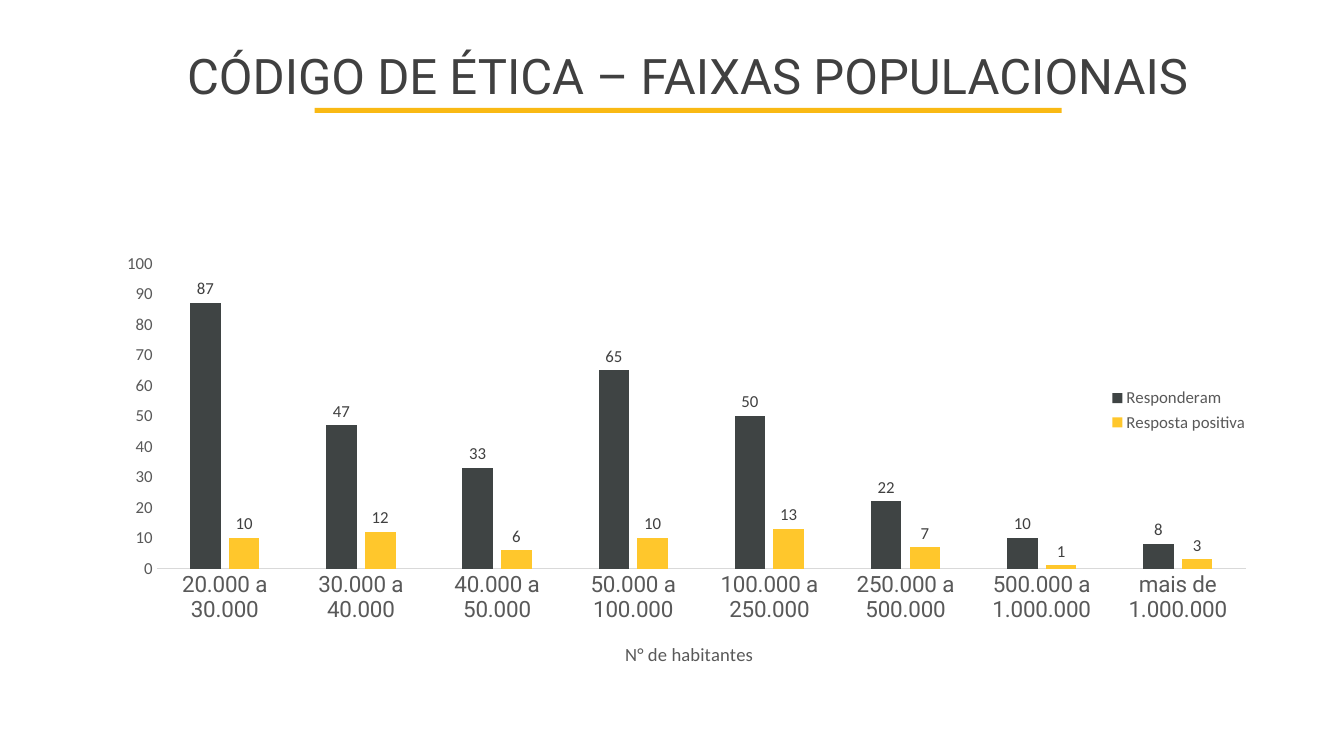
from dataclasses import dataclass

from lxml import etree
from pptx import Presentation
from pptx.chart.data import CategoryChartData
from pptx.dml.color import RGBColor
from pptx.enum.chart import (XL_CHART_TYPE, XL_LABEL_POSITION,
                             XL_LEGEND_POSITION, XL_TICK_MARK)
from pptx.enum.shapes import MSO_SHAPE
from pptx.enum.text import MSO_ANCHOR, PP_ALIGN
from pptx.oxml.ns import qn
from pptx.util import Inches, Pt

CLUSTERED = XL_CHART_TYPE.COLUMN_CLUSTERED
OUTSIDE_END = XL_LABEL_POSITION.OUTSIDE_END
RIGHT = XL_LEGEND_POSITION.RIGHT
NO_TICK = XL_TICK_MARK.NONE
TITLE_ONLY = 5


@dataclass(frozen=True)
class Theme:
    heading: str = "Roboto"
    body: str = "Calibri"
    title_size: float = 35
    category_size: float = 16
    axis_title_size: float = 13.3
    label_size: float = 12
    dark: str = "404040"
    grey: str = "595959"
    axis_line: str = "D9D9D9"
    rule: str = "F9B914"
    answered: str = "3F4444"
    positive: str = "FFC72C"


theme = Theme()


def format_font(font, name, size, color):
    font.name, font.size, font.bold = name, Pt(size), False
    font.color.rgb = RGBColor.from_string(color)


def place_in_chart(parent, index, target=None, **shares):
    """Put a manual layout, in shares of the chart, at a child index of parent."""
    for old in parent.findall(qn("c:layout")):
        parent.remove(old)
    layout = etree.Element(qn("c:layout"))
    manual = etree.SubElement(layout, qn("c:manualLayout"))
    settings = {"layoutTarget": target} if target else {}
    settings |= {"xMode": "edge", "yMode": "edge", **shares}
    for tag, value in settings.items():
        etree.SubElement(manual, qn(f"c:{tag}")).set("val", str(value))
    parent.insert(index, layout)


deck = Presentation()
deck.slide_width, deck.slide_height = Inches(13.33), Inches(7.5)
page = deck.slides.add_slide(deck.slide_layouts[TITLE_ONLY])

# Title and rule
title = page.shapes.title
title.left, title.top = Inches(0.59), Inches(0.4)
title.width, title.height = Inches(12.47), Inches(0.69)
title.text_frame.vertical_anchor = MSO_ANCHOR.TOP
title.text_frame.word_wrap = True
para = title.text_frame.paragraphs[0]
para.alignment = PP_ALIGN.CENTER
span = para.add_run()
span.text = "CÓDIGO DE ÉTICA – FAIXAS POPULACIONAIS"
format_font(span.font, theme.heading, theme.title_size, theme.dark)

rule = page.shapes.add_shape(MSO_SHAPE.RECTANGLE, Inches(3.12), Inches(1.07),
                             Inches(7.41), Inches(0.05))
rule.shadow.inherit = False
rule.fill.solid()
rule.fill.fore_color.rgb = RGBColor.from_string(theme.rule)
rule.line.fill.background()

# Chart
answers = CategoryChartData()
answers.categories = [
    "20.000 a 30.000", "30.000 a 40.000", "40.000 a 50.000", "50.000 a 100.000",
    "100.000 a 250.000", "250.000 a 500.000", "500.000 a 1.000.000",
    "mais de 1.000.000",
]
answers.add_series("Responderam", [87, 47, 33, 65, 50, 22, 10, 8])
answers.add_series("Resposta positiva", [10, 12, 6, 10, 13, 7, 1, 3])
chart = page.shapes.add_chart(CLUSTERED, Inches(0.83), Inches(2), Inches(11.68),
                              Inches(4.76), answers).chart
chart.has_title = False
format_font(chart.font, theme.body, theme.label_size, theme.grey)

plot = chart.plots[0]
plot.gap_width, plot.overlap, plot.vary_by_categories = 219, -27, False
place_in_chart(chart._chartSpace.chart.plotArea, 0, "inner",
               x=0.062, y=0.129, w=0.925, h=0.636)
for series, color in zip(plot.series, (theme.answered, theme.positive)):
    series.format.fill.solid()
    series.format.fill.fore_color.rgb = RGBColor.from_string(color)
    series.invert_if_negative = False
    labels = series.data_labels
    labels.show_value, labels.position = True, OUTSIDE_END
    format_font(labels.font, theme.body, theme.label_size, theme.dark)

# Axes
categories, values = chart.category_axis, chart.value_axis
for axis in (categories, values):
    axis.major_tick_mark = axis.minor_tick_mark = NO_TICK
    axis.has_major_gridlines = False
format_font(categories.tick_labels.font, theme.heading, theme.category_size, theme.grey)
categories.format.line.width = Pt(0.75)
categories.format.line.color.rgb = RGBColor.from_string(theme.axis_line)
format_font(values.tick_labels.font, theme.body, theme.label_size, theme.grey)
values.format.line.fill.background()
values.minimum_scale, values.maximum_scale, values.major_unit = 0, 100, 10

span = categories.axis_title.text_frame.paragraphs[0].add_run()
span.text = "N° de habitantes"
format_font(span.font, theme.body, theme.axis_title_size, theme.grey)
place_in_chart(categories.axis_title._element, 1, x=0.457, y=0.91)

# Legend
chart.has_legend = True
legend = chart.legend
legend.position, legend.include_in_layout = RIGHT, True
format_font(legend.font, theme.body, theme.label_size, theme.grey)
place_in_chart(legend._element, 1, x=0.87, y=0.38, w=0.12, h=0.11)

deck.save("out.pptx")
